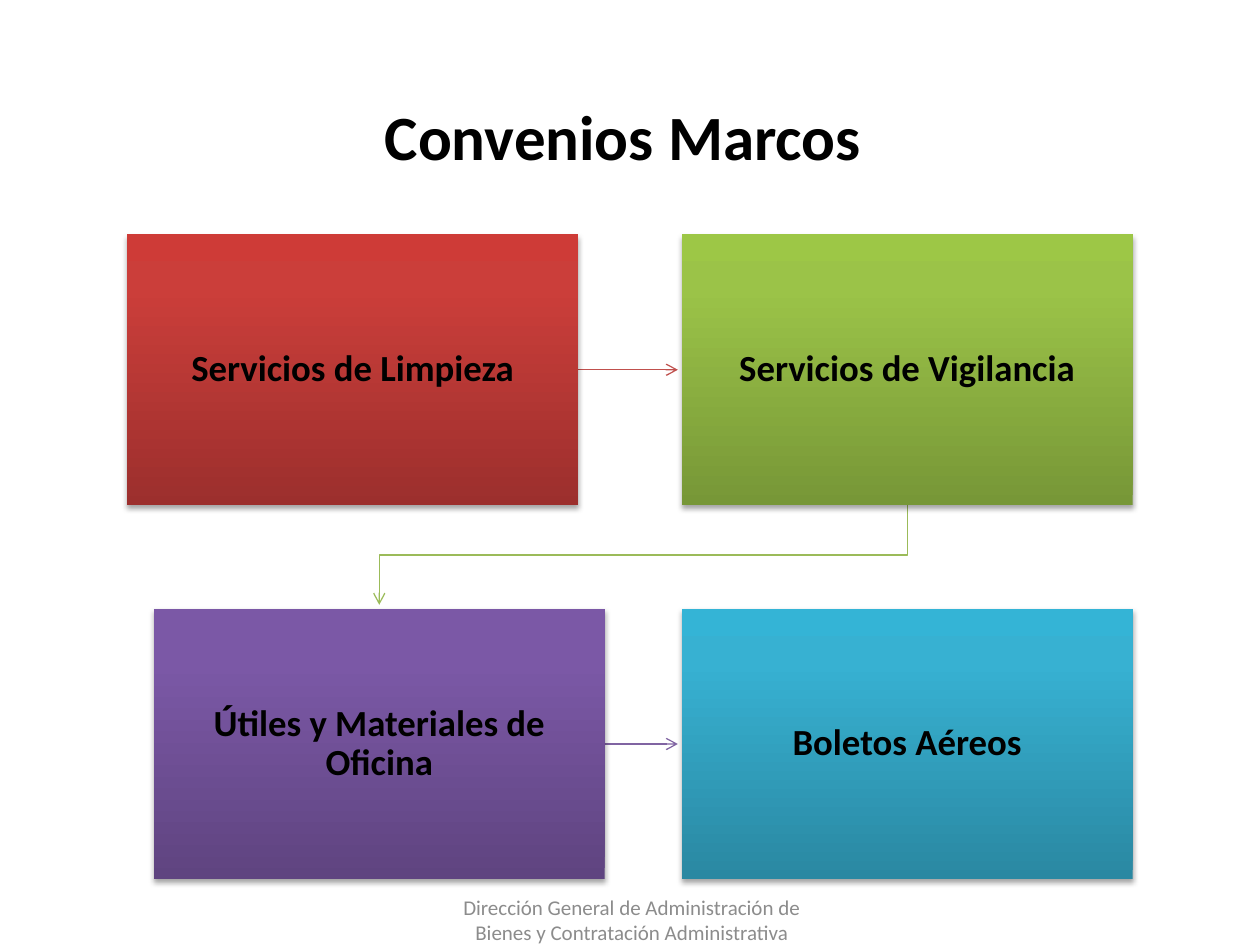
import pptx
import pptx.util
import pptx.dml.color
import pptx.enum.shapes
import pptx.enum.text
import pptx.oxml
import pptx.oxml.ns

Inches = pptx.util.Inches
Pt = pptx.util.Pt
RGB = pptx.dml.color.RGBColor
CONNECTOR = pptx.enum.shapes.MSO_CONNECTOR

BLACK = RGB(0x00, 0x00, 0x00)
GRAY = RGB(0x8C, 0x8C, 0x8C)
RED_LINE = RGB(0xC0, 0x50, 0x4D)
GREEN_LINE = RGB(0x9B, 0xBB, 0x59)
PURPLE_LINE = RGB(0x80, 0x64, 0xA2)
# Each gradient runs from the bottom of a box to its top.
RED = (RGB(0x9C, 0x2F, 0x2D), RGB(0xCB, 0x3E, 0x3A), RGB(0xCE, 0x3B, 0x37))
GREEN = (RGB(0x77, 0x97, 0x37), RGB(0x9B, 0xC3, 0x48), RGB(0x9D, 0xC7, 0x46))
PURPLE = (RGB(0x5F, 0x44, 0x80), RGB(0x7B, 0x58, 0xA6), RGB(0x7C, 0x57, 0xA8))
BLUE = (RGB(0x2A, 0x88, 0xA2), RGB(0x37, 0xB1, 0xD2), RGB(0x34, 0xB4, 0xD6))
STOPS = (0, 80, 100)

BOX_W, BOX_H = 3.58, 2.15
ROW_1, ROW_2 = 1.86, 4.83
RIGHT_X = 5.41
ARROW_GAP = 0.03


def drawing_element(tag, attributes="", inner=""):
    namespace = pptx.oxml.ns.nsdecls("a")
    return pptx.oxml.parse_xml(f"<a:{tag} {namespace} {attributes}>{inner}</a:{tag}>")


def write(tf, text, size, color, bold=False):
    """Fill a frame with one centred paragraph, anchored in the middle."""
    tf.text = text
    tf.word_wrap = True
    tf.vertical_anchor = pptx.enum.text.MSO_ANCHOR.MIDDLE
    p = tf.paragraphs[0]
    p.alignment = pptx.enum.text.PP_ALIGN.CENTER
    font = p.runs[0].font
    font.name, font.size, font.bold = "Calibri", Pt(size), bold
    font.color.rgb = color
    return p


def add_title(s, x, y, w, h):
    title = s.shapes.title
    title.left, title.top, title.width, title.height = map(Inches, (x, y, w, h))
    write(title.text_frame, "Convenios Marcos ", 36, BLACK, True)


def add_box(s, x, y, text, colors):
    box = s.shapes.add_shape(pptx.enum.shapes.MSO_SHAPE.RECTANGLE,
                             *map(Inches, (x, y, BOX_W, BOX_H)))
    box.line.fill.background()
    stops = "".join(f'<a:gs pos="{pos * 1000}"><a:srgbClr val="{color}"/></a:gs>'
                    for pos, color in zip(STOPS, colors))
    gradient = drawing_element(
        "gradFill", 'rotWithShape="1"',
        f'<a:gsLst>{stops}</a:gsLst><a:lin ang="16200000" scaled="0"/>')
    sp_pr = box.element.spPr
    sp_pr.find(pptx.oxml.ns.qn("a:prstGeom")).addnext(gradient)
    sp_pr.append(drawing_element(
        "effectLst", inner=f'<a:outerShdw blurRad="{int(Pt(3.1))}" dist="{int(Pt(1.8))}"'
        ' dir="5400000" rotWithShape="0"><a:srgbClr val="000000">'
        '<a:alpha val="35000"/></a:srgbClr></a:outerShdw>'))
    tf = box.text_frame
    tf.margin_left = tf.margin_right = tf.margin_top = tf.margin_bottom = Inches(0.16)
    write(tf, text, 21, BLACK, True).line_spacing = 0.9


def add_arrow(s, kind, x1, y1, x2, y2, color):
    arrow = s.shapes.add_connector(kind, *map(Inches, (x1, y1, x2, y2)))
    arrow.line.color.rgb = color
    arrow.line.width = Pt(0.75)
    sp_pr = arrow.element.spPr
    sp_pr.find(pptx.oxml.ns.qn("a:ln")).append(drawing_element("tailEnd", 'type="arrow"'))
    sp_pr.append(drawing_element("effectLst"))
    return arrow


def add_side_arrow(s, x, row, color):
    """Join a left box, whose left edge is x, to the right box of its row."""
    y = row + BOX_H / 2
    add_arrow(s, CONNECTOR.STRAIGHT, x + BOX_W, y, RIGHT_X - ARROW_GAP, y, color)


def add_row_arrow(s, x, color):
    """Join the upper right box to the lower left box, whose left edge is x."""
    x1, x2 = RIGHT_X + BOX_W / 2, x + BOX_W / 2
    y1, y2 = ROW_1 + BOX_H, ROW_2 - ARROW_GAP
    cx, cy = (x1 + x2) / 2, (y1 + y2) / 2
    # A quarter turn makes the elbow leave and arrive vertically.
    half_w, half_h = (y2 - y1) / 2, (x1 - x2) / 2
    arrow = add_arrow(s, CONNECTOR.ELBOW, cx - half_w, cy - half_h,
                      cx + half_w, cy + half_h, color)
    arrow.element.spPr.get_or_add_xfrm().set("rot", "5400000")


def add_process(s, x1, x2):
    """Draw the four boxes; x1 and x2 are the left edges of the left boxes."""
    add_side_arrow(s, x1, ROW_1, RED_LINE)
    add_row_arrow(s, x2, GREEN_LINE)
    add_side_arrow(s, x2, ROW_2, PURPLE_LINE)
    for x, y, text, colors in (
        (x1, ROW_1, "Servicios de Limpieza", RED),
        (RIGHT_X, ROW_1, "Servicios de Vigilancia", GREEN),
        (x2, ROW_2, "Útiles y Materiales de Oficina", PURPLE),
        (RIGHT_X, ROW_2, "Boletos Aéreos", BLUE),
    ):
        add_box(s, x, y, text, colors)


def add_footer(s, x, y, w, h):
    footer = s.shapes.add_textbox(*map(Inches, (x, y, w, h)))
    write(footer.text_frame, "Dirección General de Administración de Bienes "
          "y Contratación Administrativa", 12, GRAY)


def main():
    prs = pptx.Presentation()
    prs.slide_width, prs.slide_height = Inches(10), Inches(7.5)
    s = prs.slides.add_slide(prs.slide_layouts[5])
    add_title(s, 0.5, 0.6, 9, 0.95)
    add_process(s, 1.01, 1.22)
    add_footer(s, 3.43, 7.1, 3.17, 0.4)
    prs.save("out.pptx")


if __name__ == "__main__":
    main()
